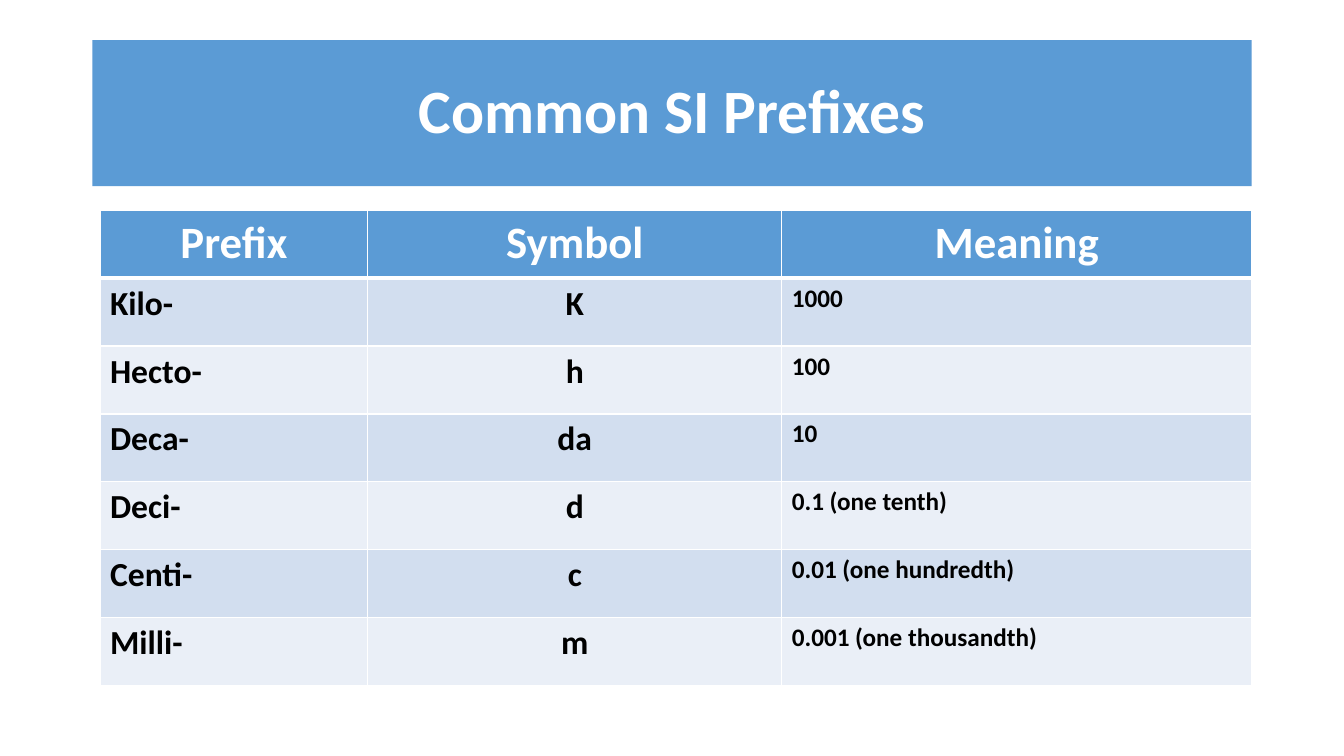
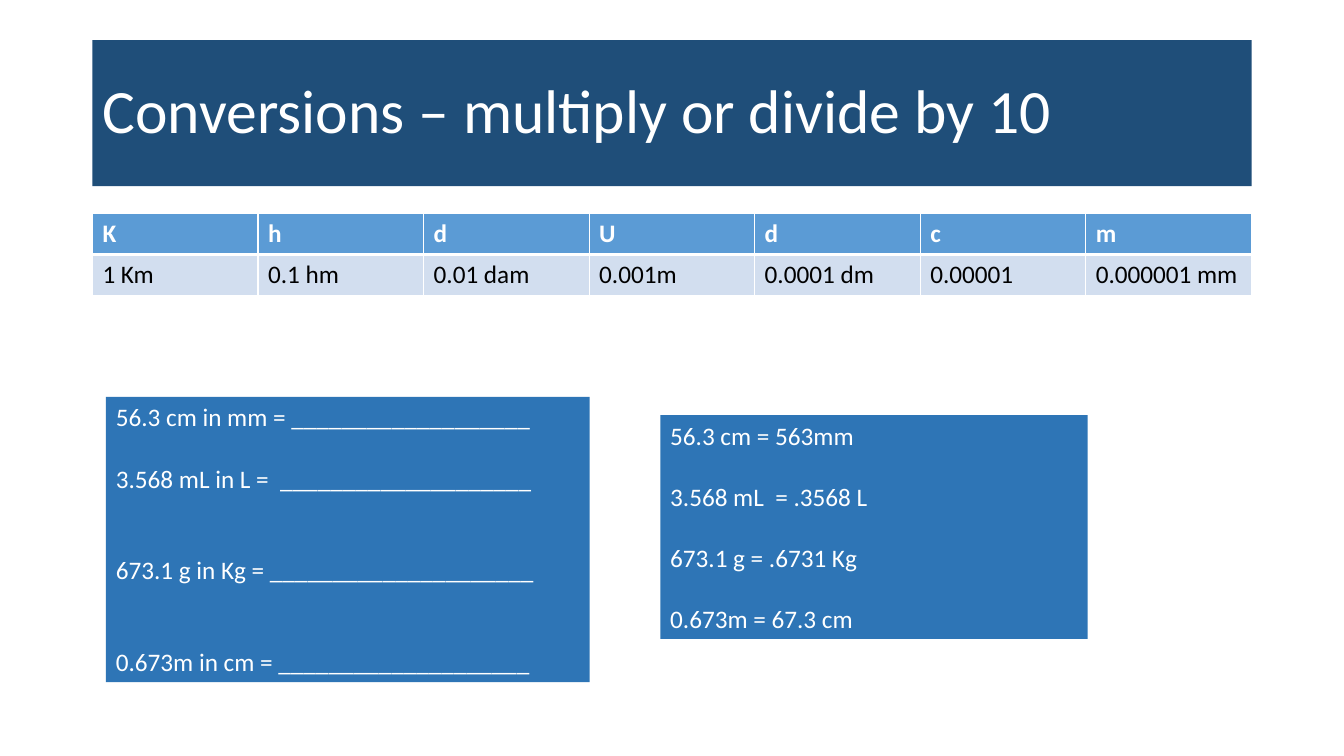
from lxml.etree import SubElement
from pptx import Presentation
from pptx.dml.color import RGBColor
from pptx.enum.shapes import MSO_SHAPE
from pptx.enum.text import MSO_ANCHOR, MSO_AUTO_SIZE, PP_ALIGN
from pptx.oxml.ns import qn
from pptx.util import Cm, Pt

FONT = "Calibri"
WHITE = RGBColor(0xFF, 0xFF, 0xFF)
BLACK = RGBColor(0x00, 0x00, 0x00)
BLUE = RGBColor(0x5B, 0x9B, 0xD5)
NAVY = RGBColor(0x1F, 0x4E, 0x79)
MID_BLUE = RGBColor(0x2E, 0x75, 0xB6)
BANDS = (RGBColor(0xD2, 0xDE, 0xEF), RGBColor(0xEA, 0xEF, 0xF7))

LEFT = Cm(2.33)
WIDTH = Cm(29.21)
LINE_PT = 22

PREFIXES = [
    ("Prefix", "Symbol", "Meaning"),
    ("Kilo-", "K", "1000"),
    ("Hecto-", "h", "100"),
    ("Deca-", "da", "10"),
    ("Deci-", "d", "0.1 (one tenth)"),
    ("Centi-", "c", "0.01 (one hundredth)"),
    ("Milli-", "m", "0.001 (one thousandth)"),
]
CONVERSIONS = [
    ("K", "h", "d", "U", "d", "c", "m"),
    ("1 Km", "0.1 hm", "0.01 dam", "0.001m", "0.0001 dm", "0.00001", "0.000001 mm"),
]
QUESTIONS = [
    ("56.3 cm in mm = ___________________", 0),
    ("3.568 mL in L =  ____________________", 1),
    ("673.1 g in Kg = _____________________", 2),
    ("0.673m in cm = ____________________", 2),
]
ANSWERS = [
    ("56.3 cm = 563mm", 0),
    ("3.568 mL  = .3568 L", 1),
    ("673.1 g = .6731 Kg", 1),
    ("0.673m = 67.3 cm", 1),
]


def write(p, text, size=18, color=WHITE, bold=False, align=PP_ALIGN.LEFT,
          before=0, spacing=1.0):
    p.alignment = align
    p.space_before = Pt(before)
    p.line_spacing = spacing
    r = p.add_run()
    r.text = text
    r.font.name = FONT
    r.font.size = Pt(size)
    r.font.bold = bold
    r.font.color.rgb = color


def add_titled_slide(prs, text, fill, **fmt):
    s = prs.slides.add_slide(prs.slide_layouts[5])
    title = s.shapes.title
    title.left, title.top, title.width, title.height = LEFT, Cm(1.01), WIDTH, Cm(3.68)
    title.fill.solid()
    title.fill.fore_color.rgb = fill
    tf = title.text_frame
    tf.vertical_anchor = MSO_ANCHOR.MIDDLE
    tf.auto_size = MSO_AUTO_SIZE.NONE
    write(tf.paragraphs[0], text, size=44, spacing=0.9, **fmt)
    return s


def set_borders(cell, **points):
    tc_pr = cell._tc.get_or_add_tcPr()
    for side in "LRTB":
        ln = SubElement(tc_pr, qn(f"a:ln{side}"), w=str(Pt(points.get(side, 1))))
        fill = SubElement(ln, qn("a:solidFill"))
        SubElement(fill, qn("a:srgbClr"), val=str(WHITE))


def add_grid(s, rows, left, top, widths, row_height, header, columns):
    frame = s.shapes.add_table(len(rows), len(widths), left, top,
                               sum(widths), row_height * len(rows))
    table = frame.table
    for column, width in zip(table.columns, widths):
        column.width = width
    for i, row in enumerate(rows):
        table.rows[i].height = row_height
        for j, text in enumerate(row):
            cell = table.cell(i, j)
            set_borders(cell, T=3 if i == 1 else 1, B=1 if i else 3)
            cell.fill.solid()
            cell.fill.fore_color.rgb = BANDS[(i - 1) % 2] if i else BLUE
            fmt = dict(columns[j], color=BLACK) if i else dict(header, bold=True)
            write(cell.text_frame.paragraphs[0], text, **fmt)


def add_panel(s, lines, left, top, width, height):
    sp = s.shapes.add_shape(MSO_SHAPE.RECTANGLE, left, top, width, height)
    sp.shadow.inherit = False
    sp.fill.solid()
    sp.fill.fore_color.rgb = MID_BLUE
    sp.line.fill.background()
    tf = sp.text_frame
    tf.word_wrap = True
    tf.vertical_anchor = MSO_ANCHOR.TOP
    for i, (text, gap) in enumerate(lines):
        p = tf.add_paragraph() if i else tf.paragraphs[0]
        write(p, text, before=gap * LINE_PT)


def add_prefixes_slide(prs):
    s = add_titled_slide(prs, "Common SI Prefixes", BLUE, bold=True,
                         align=PP_ALIGN.CENTER)
    columns = [
        dict(size=24, bold=True),
        dict(size=24, bold=True, align=PP_ALIGN.CENTER),
        dict(size=18, bold=True),
    ]
    add_grid(s, PREFIXES, Cm(2.52), Cm(5.3), [Cm(6.75), Cm(10.43), Cm(11.85)],
             Cm(1.71), dict(size=32, align=PP_ALIGN.CENTER), columns)


def add_conversions_slide(prs):
    s = add_titled_slide(prs, "Conversions – multiply or divide by 10", NAVY)
    count = len(CONVERSIONS[0])
    add_grid(s, CONVERSIONS, LEFT, Cm(5.38), [WIDTH // count] * count,
             Cm(1.03), {}, [{}] * count)
    add_panel(s, QUESTIONS, Cm(2.67), Cm(10), Cm(12.19), Cm(7.19))
    add_panel(s, ANSWERS, Cm(16.64), Cm(10.46), Cm(10.77), Cm(5.64))


def main():
    prs = Presentation()
    prs.slide_width = Cm(33.87)
    prs.slide_height = Cm(19.05)
    add_prefixes_slide(prs)
    add_conversions_slide(prs)
    prs.save("out.pptx")


if __name__ == "__main__":
    main()
